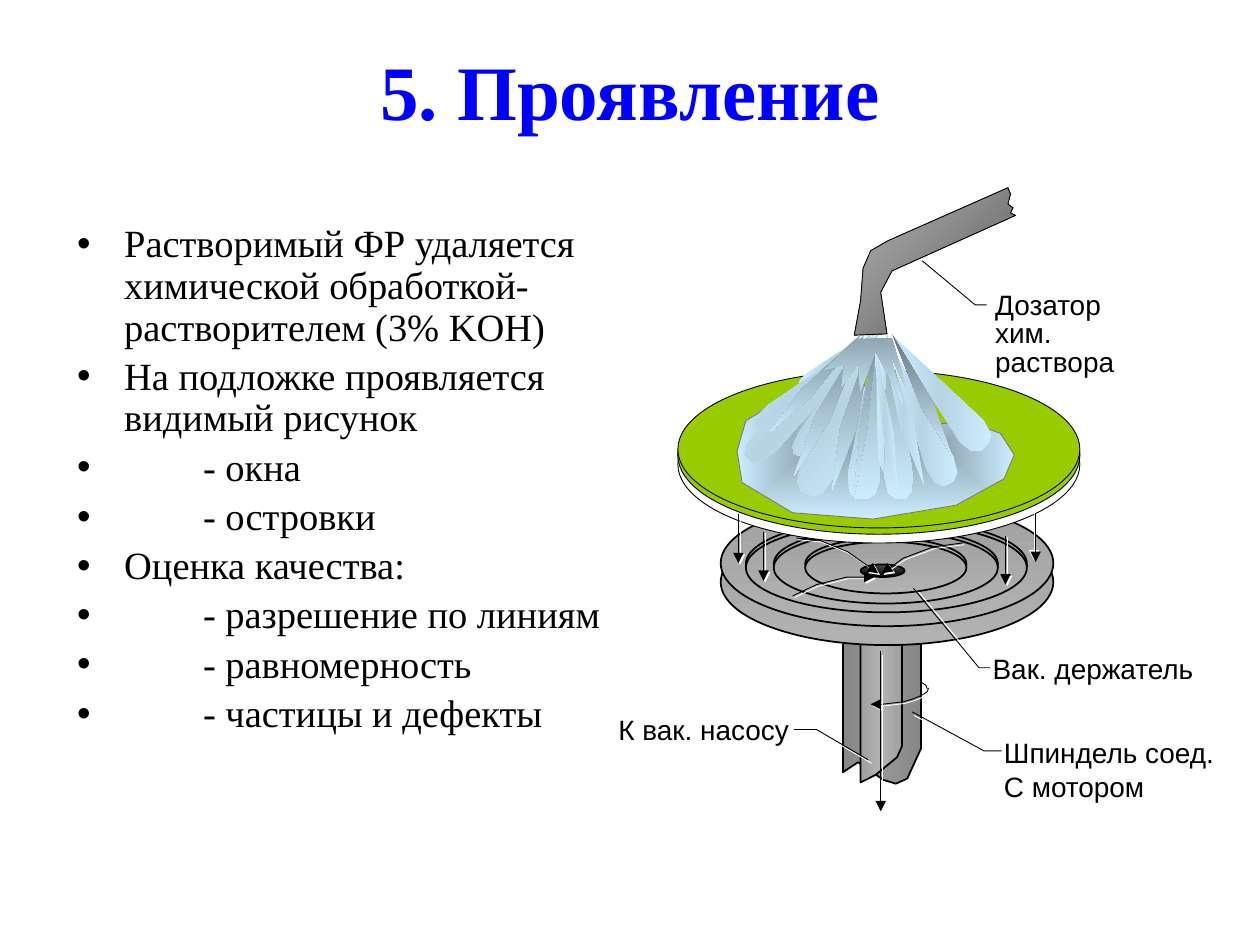
"""Build the slide on photoresist development: bullet list and a spin-developer diagram."""
from copy import deepcopy
from math import cos, hypot, pi, sin

from lxml import etree
from pptx import Presentation
from pptx.dml.color import RGBColor
from pptx.enum.shapes import MSO_CONNECTOR, MSO_SHAPE
from pptx.enum.text import MSO_ANCHOR, MSO_AUTO_SIZE, PP_ALIGN
from pptx.oxml.ns import qn
from pptx.util import Cm, Pt

STRAIGHT = MSO_CONNECTOR.STRAIGHT
OVAL = MSO_SHAPE.OVAL
TOP = MSO_ANCHOR.TOP
NO_FIT, GROW = MSO_AUTO_SIZE.NONE, MSO_AUTO_SIZE.SHAPE_TO_FIT_TEXT
LEFT, CENTER, RIGHT = PP_ALIGN.LEFT, PP_ALIGN.CENTER, PP_ALIGN.RIGHT

BLACK = RGBColor.from_string("000000")
WHITE = RGBColor.from_string("FFFFFF")
BLUE = RGBColor.from_string("0000FF")
GREEN = RGBColor.from_string("99CC00")
PALE = RGBColor.from_string("EAEAEA")
CHARCOAL = RGBColor.from_string("4C4C4C")
POOL_EDGE = RGBColor.from_string("777777")
STEEL_DARK = RGBColor.from_string("878787")
STEEL_MID = RGBColor.from_string("969696")
METAL = RGBColor.from_string("A0A0A0")
METAL_LIGHT = RGBColor.from_string("B2B2B2")
NOZZLE_DARK = RGBColor.from_string("595959")
WATER = RGBColor.from_string("CCECFF")
WATER_MID = RGBColor.from_string("B7D4E5")
WATER_DIM = RGBColor.from_string("8EA5B2")
WATER_DARK = RGBColor.from_string("7A8E99")
WATER_DEEP = RGBColor.from_string("66767F")

SHEEN = (WATER, WATER_MID, WATER)
DIM = (WATER_DIM, WATER)
DARK = (WATER_DARK, WATER)
DEEP = (WATER_DEEP, WATER)
DISC = (METAL, METAL_LIGHT)
UNIT = Cm(0.0254)

deck = Presentation()
deck.slide_width, deck.slide_height = Cm(25.4), Cm(19.05)
page = deck.slides.add_slide(deck.slide_layouts[1])


def trace(points, close=False):
    """Return an unfilled outline through points given in drawing units."""
    builder = page.shapes.build_freeform(*points[0], scale=UNIT)
    builder.add_line_segments(points[1:], close=close)
    outline = builder.convert_to_shape()
    outline.fill.background()
    return outline


def style(shape, colours=(), angle=0, width=0, edge=BLACK, arrow=False, shadow=None):
    """Set fill, line, arrowhead and shadow; shadow is (points, degrees)."""
    if len(colours) == 1:
        shape.fill.solid()
        shape.fill.fore_color.rgb = colours[0]
    elif colours:
        shape.fill.gradient()
        shape.fill.gradient_angle = (360 - angle) % 360
        if len(colours) == 3:
            first = shape._element.spPr.find(".//" + qn("a:gs"))
            first.addnext(deepcopy(first))
        stops = shape.fill.gradient_stops
        for index, colour in enumerate(colours):
            stops[index].position = index / (len(colours) - 1)
            stops[index].color.rgb = colour
    if width:
        shape.line.width = Pt(width)
        shape.line.color.rgb = edge
    else:
        shape.line.fill.background()
    properties = shape._element.spPr
    if arrow:
        etree.SubElement(properties.find(qn("a:ln")), qn("a:tailEnd"), type="triangle")
    effects = etree.SubElement(properties, qn("a:effectLst"))
    if shadow:
        distance, direction = shadow
        cast = etree.SubElement(effects, qn("a:outerShdw"), dist=str(Pt(distance)),
                                dir=str(direction * 60000), algn="ctr", rotWithShape="0")
        etree.SubElement(cast, qn("a:srgbClr"), val=str(WHITE))


title, body = page.placeholders
title.left, title.top, title.width, title.height = Cm(1.27), Cm(0.76), Cm(22.86), Cm(3.18)
title.text_frame.vertical_anchor = TOP
title.text_frame.auto_size = NO_FIT
para = title.text_frame.paragraphs[0]
para.alignment = CENTER
span = para.add_run()
span.text = "5. Проявление"
span.font.name, span.font.size, span.font.bold = "Times New Roman", Pt(44), True
span.font.color.rgb = BLUE

body.left, body.top, body.width, body.height = Cm(1.3), Cm(3.53), Cm(11.23), Cm(12.57)
body.text_frame.margin_top = Cm(1)
body.text_frame.vertical_anchor = TOP
body.text_frame.auto_size = NO_FIT
items = [
    "Растворимый ФР удаляется химической обработкой- растворителем (3% KOH)",
    "На подложке проявляется видимый рисунок",
    "- окна", "- островки",
    "Оценка качества:",
    "- разрешение по линиям", "- равномерность", "- частицы и дефекты",
]
for index, wording in enumerate(items):
    para = body.text_frame.add_paragraph() if index else body.text_frame.paragraphs[0]
    para.line_spacing = 0.9
    para.space_before = Pt(4.4 if index else 0)
    indent = Cm(2.54 if wording.startswith("-") else 0.95)
    layout = para._p.get_or_add_pPr()
    layout.set("marL", str(indent))
    layout.set("indent", str(-indent))
    etree.SubElement(layout, qn("a:buChar"), char="•")
    span = para.add_run()
    span.text = wording
    span.font.name, span.font.size = "Times New Roman", Pt(22)
    span.font.color.rgb = BLACK

labels = [
    ("Вак. держатель", 778, 512, 181, 36, False, LEFT, 1),
    ("Шпиндель соед. С мотором", 787, 579, 194, 63, True, LEFT, 1),
    ("К вак. насосу", 465, 566, 171, 31, True, RIGHT, 0.8),
    ("Дозатор хим. раствора", 780, 227, 142, 78, True, LEFT, 0.85),
]
for wording, x, y, width, height, wraps, alignment, spacing in labels:
    box = page.shapes.add_textbox(x * UNIT, y * UNIT, width * UNIT, height * UNIT)
    box.text_frame.word_wrap = wraps
    box.text_frame.auto_size = GROW
    para = box.text_frame.paragraphs[0]
    para.alignment, para.line_spacing = alignment, spacing
    span = para.add_run()
    span.text = wording
    span.font.name, span.font.size = "Arial", Pt(16)
    span.font.color.rgb = BLACK

quarter = [step * pi / 16 for step in range(9)]
style(trace([(690 + 46 * sin(a), 547 - 13 * cos(a)) for a in quarter]), width=0.5)
spindle_back = [(669, 511), (669, 613), (681, 605), (701, 619), (711, 622), (720, 618),
                (731, 594), (731, 511)]
spindle_front = [(683, 452), (683, 621), (695, 615), (712, 601), (716, 592), (716, 452)]
style(trace(spindle_back), (STEEL_DARK, STEEL_MID, STEEL_DARK), width=1)
style(trace(spindle_front), (METAL, METAL_LIGHT, METAL), width=1)

discs = [(572, top, 264, 100, DISC, 1) for top in (412, 397)]
for width in (223, 178, 128):
    height = round(width * 0.32)
    discs += [(703 - width // 2, 447 - height // 2 + drop, width, height, DISC, 1) for drop in (0, 3)]
discs.append((683, 448, 35, 10, (CHARCOAL, BLACK), 1))
wafers = [(298, PALE), (306, WHITE), (299, GREEN), (294, GREEN)]
discs += [(538, top, 319, 125, (colour,), 0.5) for top, colour in wafers]
for x, y, width, height, colours, weight in discs:
    disc = page.shapes.add_shape(OVAL, x * UNIT, y * UNIT, width * UNIT, height * UNIT)
    style(disc, colours, 90, weight)

pool = trace([(681, 298), (639, 305), (592, 334), (585, 358), (589, 383), (629, 407), (693, 412),
              (759, 401), (797, 380), (805, 361), (794, 344), (767, 334), (709, 341)], True)
style(pool, DIM, width=0.5, edge=POOL_EDGE)
linear = pool._element.spPr.find(".//" + qn("a:lin"))
radial = etree.Element(qn("a:path"), path="rect")
etree.SubElement(radial, qn("a:fillToRect"), dict.fromkeys("ltrb", "50000"))
linear.getparent().replace(linear, radial)

petal = [(0.86, 1), (0.96, 0.8), (1, 0.35)]
streak = [(0.6, 1), (1, 0)]
crown = [(679, 269), (654, 294), (670, 289), (668, 307), (681, 289), (683, 310), (695, 279),
         (717, 321), (706, 280), (719, 308), (708, 268)]
jets = [
    (petal, SHEEN, 0, 691, 658, 301, 3), (petal, SHEEN, 0, 688, 636, 310, 8),
    (petal, SHEEN, 45, 692, 600, 338, 7), (petal, SHEEN, 45, 698, 594, 364, 11),
    (petal, SHEEN, 45, 692, 632, 361, 8), (petal, SHEEN, 45, 694, 641, 392, 14),
    (petal, DIM, 90, 696, 684, 396, 13), (petal, SHEEN, 0, 695, 711, 378, 12),
    (petal, DIM, 90, 704, 715, 396, 12), (petal, SHEEN, 0, 702, 753, 384, 12),
    (petal, SHEEN, 0, 707, 782, 355, 13),
    (streak, DARK, 90, 684, 610, 344, 5), (streak, DARK, 90, 686, 630, 378, 6),
    (streak, DARK, 90, 693, 660, 391, 6), (streak, SHEEN, 0, 699, 734, 387, 5),
    (streak, SHEEN, 0, 692, 713, 394, 4), (streak, DARK, 90, 696, 678, 393, 3),
    (None, DIM, 90, 0, 0, 0, 0), (streak, DEEP, 90, 708, 755, 361, 5),
]
for profile, colours, angle, start, tip, bottom, spread in jets:
    if profile:
        across, down = tip - start, bottom - 265
        reach = hypot(across, down)
        sides = [(t, spread * w / reach) for t, w in profile]
        sides += [(t, -w) for t, w in reversed(sides)]
        points = [(start, 265)] + [(start + across * t + down * w, 265 + down * t - across * w)
                                   for t, w in sides]
    else:
        points = crown
    style(trace(points, True), colours, angle)

nozzle = [(800, 149), (705, 191), (691, 199), (685, 213), (683, 239), (678, 266), (704, 265), (699, 232),
          (708, 215), (806, 171), (802, 169), (804, 165), (800, 162), (802, 154)]
style(trace(nozzle, True), (METAL_LIGHT, NOZZLE_DARK), 45, 0.5)

flows = [
    [(764, 431), (741, 434), (717, 443), (700, 455)],
    [(632, 427), (651, 429), (673, 438), (697, 455)],
    [(629, 473), (648, 464), (672, 458), (694, 458)],
    [(691 + 46 * cos(a), 546 + 13 * sin(a)) for a in quarter],
]
for points in flows:
    style(trace(points), width=0.5, arrow=True, shadow=(1.4, 45))

drops = [(586, 408, 39, 1.4, 45), (699, 517, 127, 2.2, 63), (822, 407, 39, 1.4, 225),
         (606, 422, 39, 1.4, 45), (798, 425, 39, 1.4, 45)]
for x, top, fall, distance, direction in drops:
    drop = page.shapes.add_connector(STRAIGHT, x * UNIT, top * UNIT, x * UNIT, (top + fall) * UNIT)
    style(drop, width=0.5, arrow=True, shadow=(distance, direction))

leaders = [
    ([(786, 530), (777, 530), (725, 467)], (3.6, 34)),
    ([(795, 596), (781, 596), (724, 565)], (2.2, 63)),
    ([(630, 579), (648, 579), (689, 603)], (2.8, 45)),
    ([(783, 242), (774, 242), (732, 207)], None),
]
for points, shadow in leaders:
    style(trace(points), width=0.5, shadow=shadow)

deck.save("out.pptx")
